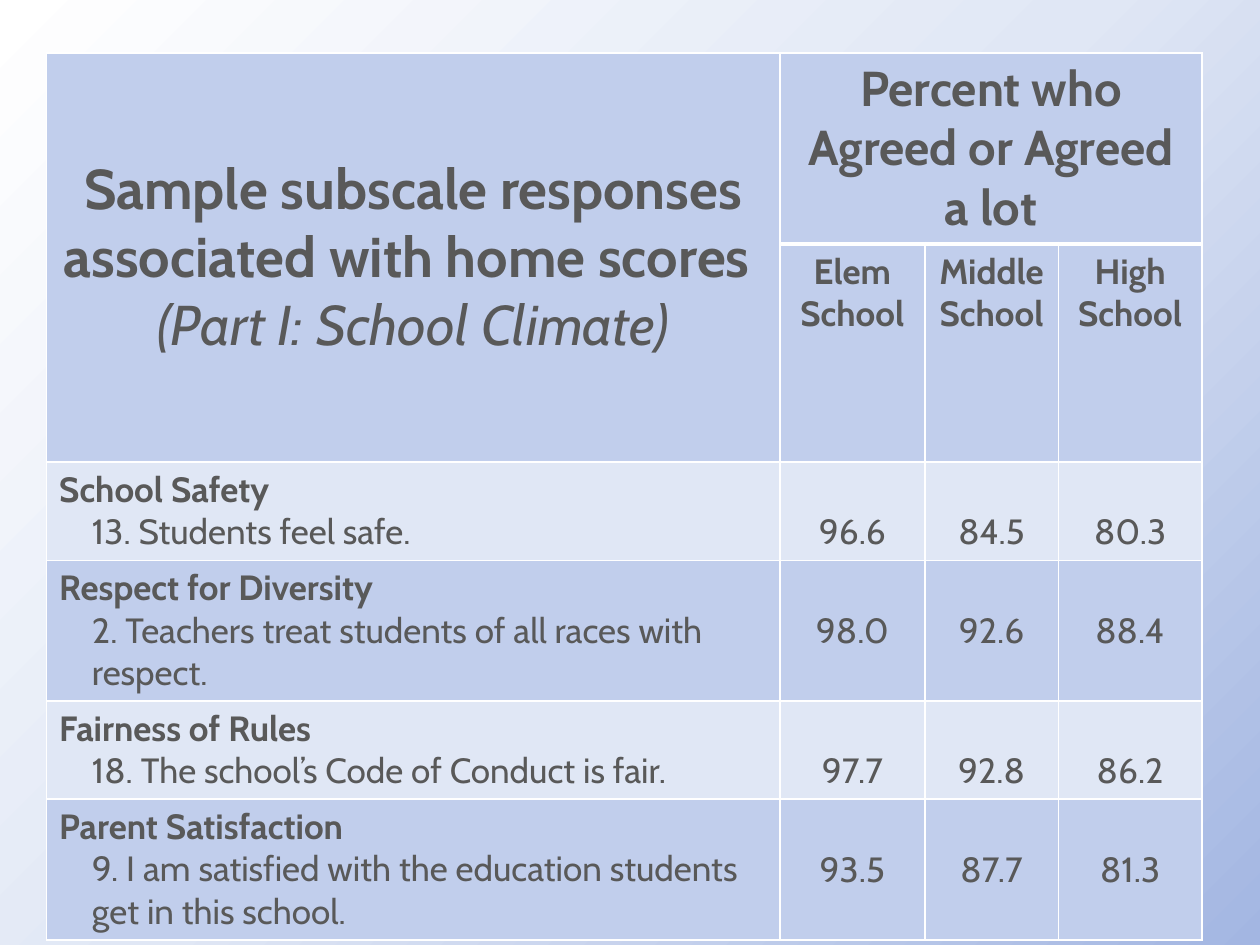
from lxml import etree
from pptx import Presentation
from pptx.dml.color import RGBColor
from pptx.enum.text import MSO_ANCHOR, PP_ALIGN
from pptx.oxml.ns import qn
from pptx.util import Inches, Pt

CENTER, LEFT = PP_ALIGN.CENTER, PP_ALIGN.LEFT
MIDDLE = MSO_ANCHOR.MIDDLE

FONT = "Cabin"
INK = RGBColor(0x59, 0x59, 0x59)
WHITE = RGBColor(0xFF, 0xFF, 0xFF)
DARK = RGBColor(0xC1, 0xCE, 0xEC)
PALE = RGBColor(0xE0, 0xE7, 0xF5)
DEEP = RGBColor(0xA3, 0xB6, 0xE2)

COLS = [5.82, 1.15, 1.06, 1.14]
ROWS = [1.51, 1.73, 0.78, 1.11, 0.78, 1.11]
LEVELS = [["Elem", "School"], ["Middle School"], ["High School"]]
ITEMS = [
    ("School Safety", "13. Students feel safe.", ["96.6", "84.5", "80.3"]),
    ("Respect for Diversity",
     "2. Teachers treat students of all races with respect.",
     ["98.0", "92.6", "88.4"]),
    ("Fairness of Rules", "18. The school’s Code of Conduct is fair.",
     ["97.7", "92.8", "86.2"]),
    ("Parent Satisfaction",
     "9. I am satisfied with the education students get in this school.",
     ["93.5", "87.7", "81.3"]),
]


def add_run(para, text, size=20, bold=False, italic=False):
    run = para.add_run()
    run.text = text
    font = run.font
    font.name, font.size = FONT, Pt(size)
    font.bold, font.italic = bold, italic
    font.color.rgb = INK


def add_para(cell, first, align=LEFT, indent=0):
    frame = cell.text_frame
    para = frame.paragraphs[0] if first else frame.add_paragraph()
    para.alignment = align
    if indent:
        props = para._p.get_or_add_pPr()
        props.set("marL", str(Inches(indent)))
        props.set("indent", "0")
    return para


def set_edges(cell, top=1, bottom=1):
    props = cell._tc.get_or_add_tcPr()
    sides = [("L", 1), ("R", 1), ("T", top), ("B", bottom)]
    for pos, (side, width) in enumerate(sides):
        line = etree.Element(qn(f"a:ln{side}"), w=str(Pt(width)))
        fill = etree.SubElement(line, qn("a:solidFill"))
        etree.SubElement(fill, qn("a:srgbClr"), val=str(WHITE))
        props.insert(pos, line)


def set_back(slide):
    # Radial gradient spreading from the bottom right corner
    slide.background.fill.gradient()
    grad = slide.element.find(f".//{qn('a:gradFill')}")
    for child in list(grad):
        grad.remove(child)
    stops = etree.SubElement(grad, qn("a:gsLst"))
    for pos, color in [(0, DEEP), (50, PALE), (100, WHITE)]:
        stop = etree.SubElement(stops, qn("a:gs"), pos=str(pos * 1000))
        etree.SubElement(stop, qn("a:srgbClr"), val=str(color))
    shade = etree.SubElement(grad, qn("a:path"))
    shade.set("path", "circle")
    etree.SubElement(shade, qn("a:fillToRect"), l="100000", t="100000")


def add_grid(slide):
    frame = slide.shapes.add_table(
        len(ROWS), len(COLS), Inches(0.37), Inches(0.42),
        Inches(sum(COLS)), Inches(sum(ROWS)))
    table = frame.table
    for col, width in zip(table.columns, COLS):
        col.width = Inches(width)
    for row, height in zip(table.rows, ROWS):
        row.height = Inches(height)

    # Fills and borders, with a thick rule under the percent heading
    for r in range(len(ROWS)):
        for c in range(len(COLS)):
            cell = table.cell(r, c)
            cell.fill.solid()
            cell.fill.fore_color.rgb = PALE if r in (2, 4) else DARK
            set_edges(cell, top=3 if r == 1 and c else 1,
                      bottom=3 if r == 0 and c else 1)
    table.cell(0, 0).merge(table.cell(1, 0))
    table.cell(0, 1).merge(table.cell(0, 3))
    return table


def fill_head(table):
    title = table.cell(0, 0)
    title.vertical_anchor = MIDDLE
    para = add_para(title, True, CENTER)
    add_run(para, "Sample subscale responses associated with home scores ",
            32, bold=True)
    para.add_line_break()
    add_run(para, "(Part I: School Climate)", 32, italic=True)

    para = add_para(table.cell(0, 1), True, CENTER)
    add_run(para, "Percent who Agreed or Agreed a lot", 28, bold=True)

    for c, lines in enumerate(LEVELS, 1):
        for n, text in enumerate(lines):
            add_run(add_para(table.cell(1, c), n == 0, CENTER), text, bold=True)


def fill_item(table, r, topic, text, scores):
    cell = table.cell(r, 0)
    add_run(add_para(cell, True), topic, bold=True)
    add_run(add_para(cell, False, indent=0.26), text)
    # Scores sit level with the first line of the statement
    for c, score in enumerate(scores, 1):
        cell = table.cell(r, c)
        cell.margin_top = Inches(0.39)
        add_run(add_para(cell, True, CENTER), score)


def main():
    deck = Presentation()
    deck.slide_width, deck.slide_height = Inches(10), Inches(7.5)
    slide = deck.slides.add_slide(deck.slide_layouts[6])
    set_back(slide)
    table = add_grid(slide)
    fill_head(table)
    for r, item in enumerate(ITEMS, 2):
        fill_item(table, r, *item)
    deck.save("out.pptx")


if __name__ == "__main__":
    main()
